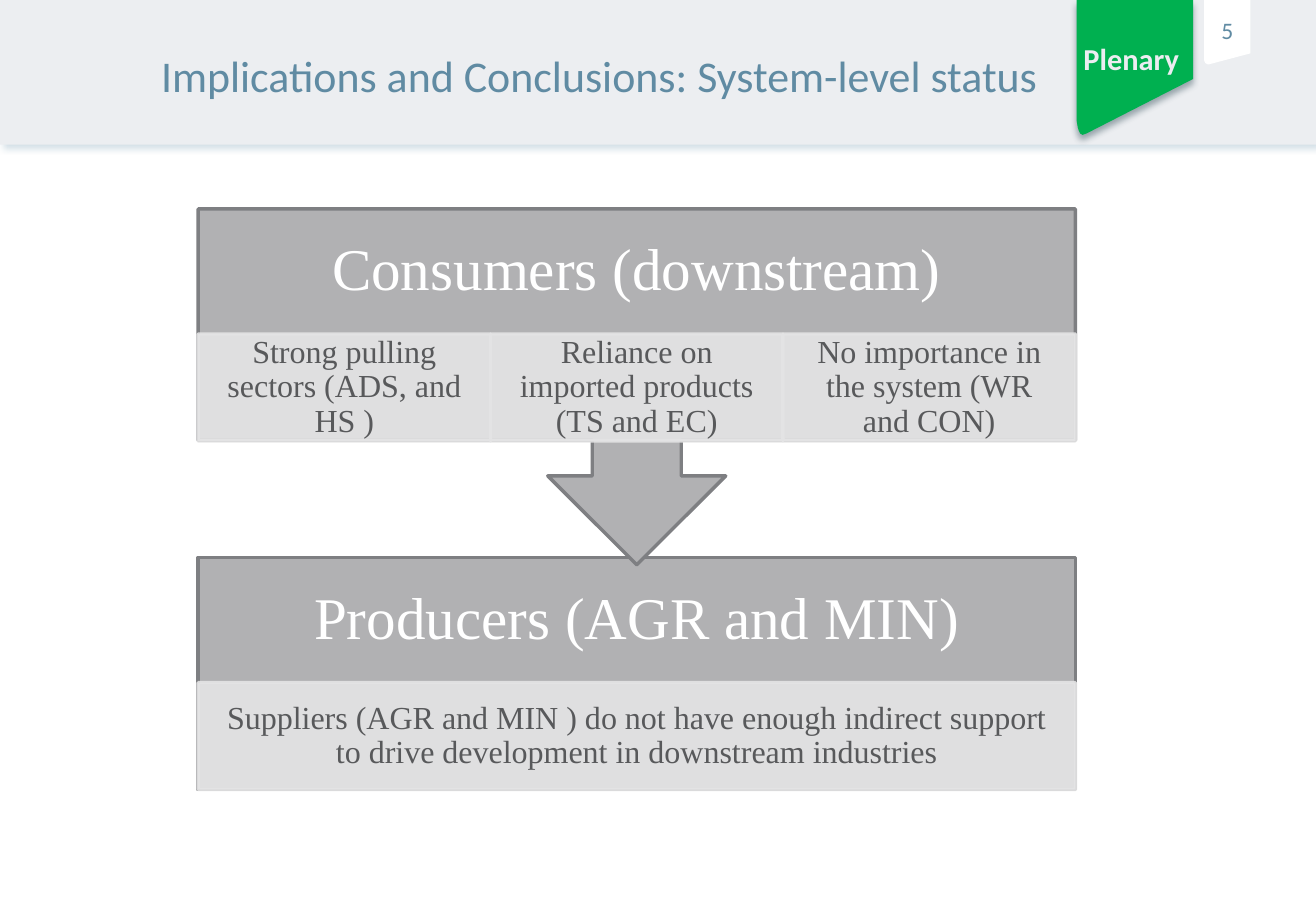
import pptx
import pptx.util
import pptx.dml.color
import pptx.enum.shapes
import pptx.enum.text
import pptx.oxml
import pptx.oxml.ns

Inches, Pt = pptx.util.Inches, pptx.util.Pt
PRESET = pptx.enum.shapes.MSO_SHAPE
ANCHOR = pptx.enum.text.MSO_ANCHOR

TITLE = "Implications and Conclusions: System-level status"
PAGE_NUMBER = "5"
SECTION = "Plenary"
# heading, details, top, block height, preset, rotation
STAGES = [
    ("Producers (AGR and MIN)",
     ["Suppliers (AGR and MIN ) do not have enough indirect support "
      "to drive development in downstream industries"],
     4.59, 1.91, PRESET.RECTANGLE, 0),
    ("Consumers (downstream)",
     ["Strong pulling sectors (ADS, and HS )",
      "Reliance on imported products (TS and EC)",
      "No importance in the system (WR and CON)"],
     1.72, 2.93, PRESET.UP_ARROW_CALLOUT, 180),
]
PAGE_TAB = [(9.91, 0), (10.29, 0), (10.29, 0.44), (9.95, 0.53),
            (9.94, 0.53), (9.92, 0.52), (9.91, 0.5)]
SECTION_TAB = [(8.86, 0), (9.82, 0), (9.82, 0.65), (8.94, 1.1), (8.91, 1.11),
               (8.89, 1.1), (8.88, 1.08), (8.87, 1.05), (8.86, 0.99)]

SANS, SERIF = "Calibri", "Times New Roman"
BLUE, GREEN, WHITE = "608BA3", "00B050", "FFFFFF"
BLOCK_LEFT, BLOCK_WIDTH = 1.63, 7.22
HEADING_HEIGHT, DETAIL_HEIGHT = 1.03, 0.88


def rgb(value):
    return pptx.dml.color.RGBColor.from_string(value)


def paint(shape, fill, line=None):
    shape.shadow.inherit = False
    shape.fill.solid()
    shape.fill.fore_color.rgb = rgb(fill)
    if line:
        shape.line.color.rgb = rgb(line)
        shape.line.width = Pt(2)
    else:
        shape.line.fill.background()


def add_shadow(shape, color, angle):
    effects = shape._element.spPr.find(pptx.oxml.ns.qn("a:effectLst"))
    effects.append(pptx.oxml.parse_xml(
        f'<a:outerShdw {pptx.oxml.ns.nsdecls("a")} blurRad="{Pt(4)}" dist="{Pt(3)}" '
        f'dir="{angle * 60000}" algn="ctr" rotWithShape="0"><a:srgbClr val="{color}">'
        '<a:alpha val="40000"/></a:srgbClr></a:outerShdw>'))


def make_translucent(shape, percent):
    for color in shape._element.spPr.iter(pptx.oxml.ns.qn("a:srgbClr")):
        color.append(pptx.oxml.parse_xml(
            f'<a:alpha {pptx.oxml.ns.nsdecls("a")} val="{percent * 1000}"/>'))


def write(shape, text, size, font, color, insets=(0, 0, 0, 0),
          anchor=ANCHOR.MIDDLE, wrap=True, bold=False, spacing=None):
    """Fill a shape with one centred paragraph; insets are left, top, right, bottom."""
    frame = shape.text_frame
    frame.word_wrap = wrap
    frame.vertical_anchor = anchor
    (frame.margin_left, frame.margin_top,
     frame.margin_right, frame.margin_bottom) = map(Inches, insets)
    paragraph = frame.paragraphs[0]
    paragraph.text = text
    paragraph.alignment = pptx.enum.text.PP_ALIGN.CENTER
    if spacing:
        paragraph.line_spacing = spacing
    paragraph.font.size = Pt(size)
    paragraph.font.name = font
    paragraph.font.bold = bold
    paragraph.font.color.rgb = rgb(color)


def add_preset(shapes, preset, box, fill, line=None):
    shape = shapes.add_shape(preset, *map(Inches, box))
    paint(shape, fill, line)
    return shape


def add_outline(shapes, points, fill):
    corners = [(Inches(x), Inches(y)) for x, y in points]
    builder = shapes.build_freeform(*corners[0], scale=1.0)
    builder.add_line_segments(corners[1:], close=True)
    shape = builder.convert_to_shape()
    paint(shape, fill)
    return shape


def add_header(shapes):
    band = add_preset(shapes, PRESET.RECTANGLE, (0, 0, 10.83, 1.19), "ECEEF1")
    add_shadow(band, "8FAEC1", 45)
    page_tab = add_outline(shapes, PAGE_TAB, WHITE)
    write(page_tab, PAGE_NUMBER, 14, SANS, BLUE, (0, 0, 0, 0.04), wrap=False)
    section_tab = add_outline(shapes, SECTION_TAB, GREEN)
    add_shadow(section_tab, "183642", 90)
    section = add_preset(shapes, PRESET.RECTANGLE, (8.88, 0.33, 0.86, 0.3), GREEN)
    write(section, SECTION, 18, SANS, "ECEDF1", anchor=ANCHOR.TOP, bold=True)
    title = shapes.add_textbox(*map(Inches, (0.43, 0.35, 9.01, 0.41)))
    write(title, TITLE, 26, SANS, BLUE, (0.1, 0.05, 0.1, 0.05), ANCHOR.TOP)


def add_stage(shapes, heading, details, top, height, preset, rotation):
    block = add_preset(shapes, preset, (BLOCK_LEFT, top, BLOCK_WIDTH, height),
                       "B1B1B3", "7E7F82")
    block.rotation = rotation
    label = shapes.add_textbox(*map(Inches, (BLOCK_LEFT, top, BLOCK_WIDTH, HEADING_HEIGHT)))
    write(label, heading, 35, SERIF, WHITE, (0.27,) * 4, spacing=0.9)
    width = BLOCK_WIDTH / len(details)
    for column, detail in enumerate(details):
        box = (BLOCK_LEFT + column * width, top + HEADING_HEIGHT, width, DETAIL_HEIGHT)
        panel = add_preset(shapes, PRESET.RECTANGLE, box, "E4E4E5", "E4E4E5")
        make_translucent(panel, 90)
        write(panel, detail, 19, SERIF, "58595B", (0.15, 0.03, 0.15, 0.03), spacing=0.9)


def main():
    deck = pptx.Presentation()
    deck.slide_width, deck.slide_height = Inches(10.83), Inches(7.5)
    shapes = deck.slides.add_slide(deck.slide_layouts[6]).shapes
    add_header(shapes)
    for stage in STAGES:
        add_stage(shapes, *stage)
    deck.save("out.pptx")


if __name__ == "__main__":
    main()
